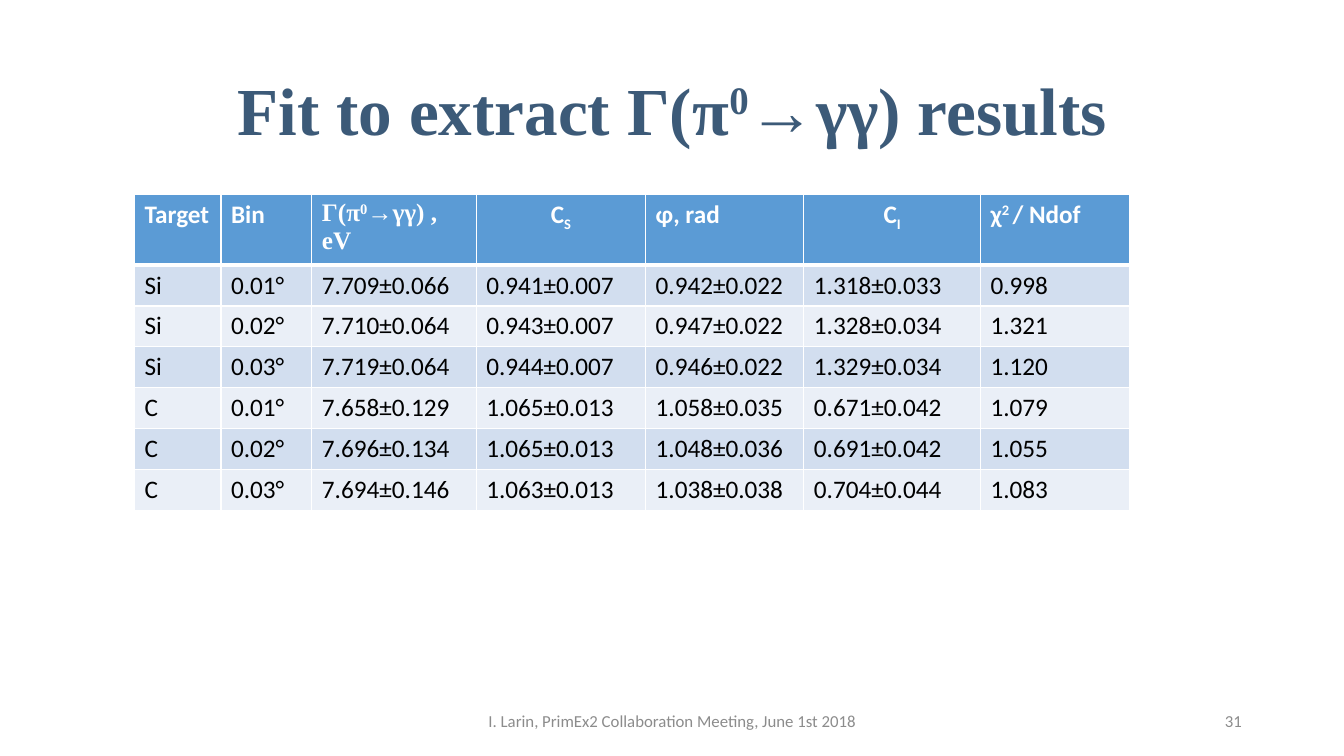
from lxml import etree
from pptx import Presentation
from pptx.dml.color import RGBColor
from pptx.enum import text as t
from pptx.oxml import ns
from pptx.util import Cm, Pt

# Content: each heading is a list of (text, baseline in percent)
TITLE = [("Fit to extract Γ(π", 0), ("0", 30), ("→γγ) results", 0)]
HEADS = [
    [("Target", 0)],
    [("Bin", 0)],
    [("Γ(π", 0), ("0", 30), ("→γγ) , eV", 0)],
    [("C", 0), ("S", -25)],
    [("φ, rad", 0)],
    [("C", 0), ("I", -25)],
    [("χ", 0), ("2 ", 30), ("/ Ndof", 0)],
]
ROWS = [
    ("Si", "0.01°", "7.709±0.066", "0.941±0.007", "0.942±0.022", "1.318±0.033", "0.998"),
    ("Si", "0.02°", "7.710±0.064", "0.943±0.007", "0.947±0.022", "1.328±0.034", "1.321"),
    ("Si", "0.03°", "7.719±0.064", "0.944±0.007", "0.946±0.022", "1.329±0.034", "1.120"),
    ("C", "0.01°", "7.658±0.129", "1.065±0.013", "1.058±0.035", "0.671±0.042", "1.079"),
    ("C", "0.02°", "7.696±0.134", "1.065±0.013", "1.048±0.036", "0.691±0.042", "1.055"),
    ("C", "0.03°", "7.694±0.146", "1.063±0.013", "1.038±0.038", "0.704±0.044", "1.083"),
]
ALIGN = t.PP_ALIGN
FOOT = [  # text, left, width, alignment
    ("I. Larin, PrimEx2 Collaboration Meeting, June 1st 2018", 11.23, 11.43, ALIGN.CENTER),
    ("31", 23.93, 7.62, ALIGN.RIGHT),
]
WIDTHS = [2.18, 2.29, 4.14, 4.27, 3.99, 4.45, 3.76]
HIGH = 1.03
HEX = {"title": "3C5A78", "head": "5B9BD5", "odd": "D2DEEF", "even": "EAEFF7",
       "white": "FFFFFF", "black": "000000", "foot": "8C8C8C"}
SANS, SERIF = "Calibri", "Times New Roman"


def write(para, runs, color, **form):
    for words, base in runs:
        run = para.add_run()
        run.text = words
        for key, val in form.items():
            setattr(run.font, key, val)
        run.font.color.rgb = RGBColor.from_string(HEX[color])
        if base:
            run._r.get_or_add_rPr().set("baseline", str(base * 1000))


def border(cell, top, base):
    props = cell._tc.get_or_add_tcPr()
    sides = {"lnL": 1, "lnR": 1, "lnT": top, "lnB": base}
    for spot, (side, wide) in enumerate(sides.items()):
        line = etree.Element(ns.qn("a:" + side), w=str(Pt(wide)))
        fill = etree.SubElement(line, ns.qn("a:solidFill"))
        etree.SubElement(fill, ns.qn("a:srgbClr"), val=HEX["white"])
        props.insert(spot, line)


deck = Presentation()
deck.slide_width, deck.slide_height = Cm(33.87), Cm(19.05)
slide = deck.slides.add_slide(deck.slide_layouts[5])

# Title
title = slide.shapes.title
place = {"left": 2.34, "top": 1.8, "width": 29.21, "height": 2.11}
for key, val in place.items():
    setattr(title, key, Cm(val))
frame = title.text_frame
frame.word_wrap = True
frame.auto_size = t.MSO_AUTO_SIZE.SHAPE_TO_FIT_TEXT
frame.vertical_anchor = t.MSO_ANCHOR.MIDDLE
para = frame.paragraphs[0]
para.alignment, para.line_spacing = ALIGN.CENTER, 0.9
write(para, TITLE, "title", size=Pt(48), name=SERIF, bold=True)

# Table of fit results
lines = [HEADS] + [[[(word, 0)] for word in row] for row in ROWS]
grid = slide.shapes.add_table(len(lines), len(WIDTHS), Cm(3.39), Cm(4.9),
                              Cm(sum(WIDTHS)), Cm(HIGH * len(lines))).table
for col, wide in zip(grid.columns, WIDTHS):
    col.width = Cm(wide)
for r, line in enumerate(lines):
    grid.rows[r].height = Cm(HIGH)
    head = r == 0
    tint = "head" if head else "odd" if r % 2 else "even"
    for c, runs in enumerate(line):
        cell = grid.cell(r, c)
        cell.fill.solid()
        cell.fill.fore_color.rgb = RGBColor.from_string(HEX[tint])
        border(cell, 3 if r == 1 else 1, 3 if head else 1)
        para = cell.text_frame.paragraphs[0]
        para.alignment = ALIGN.CENTER if head and c in (3, 5) else ALIGN.LEFT
        write(para, runs, "white" if head else "black", size=Pt(18), bold=head,
              name=SERIF if head and c == 2 else SANS)

# Footer and page number
for words, left, wide, align in FOOT:
    frame = slide.shapes.add_textbox(Cm(left), Cm(17.65), Cm(wide), Cm(1.02)).text_frame
    frame.word_wrap = True
    frame.vertical_anchor = t.MSO_ANCHOR.MIDDLE
    para = frame.paragraphs[0]
    para.alignment = align
    write(para, [(words, 0)], "foot", size=Pt(12), name=SANS)

deck.save("out.pptx")
